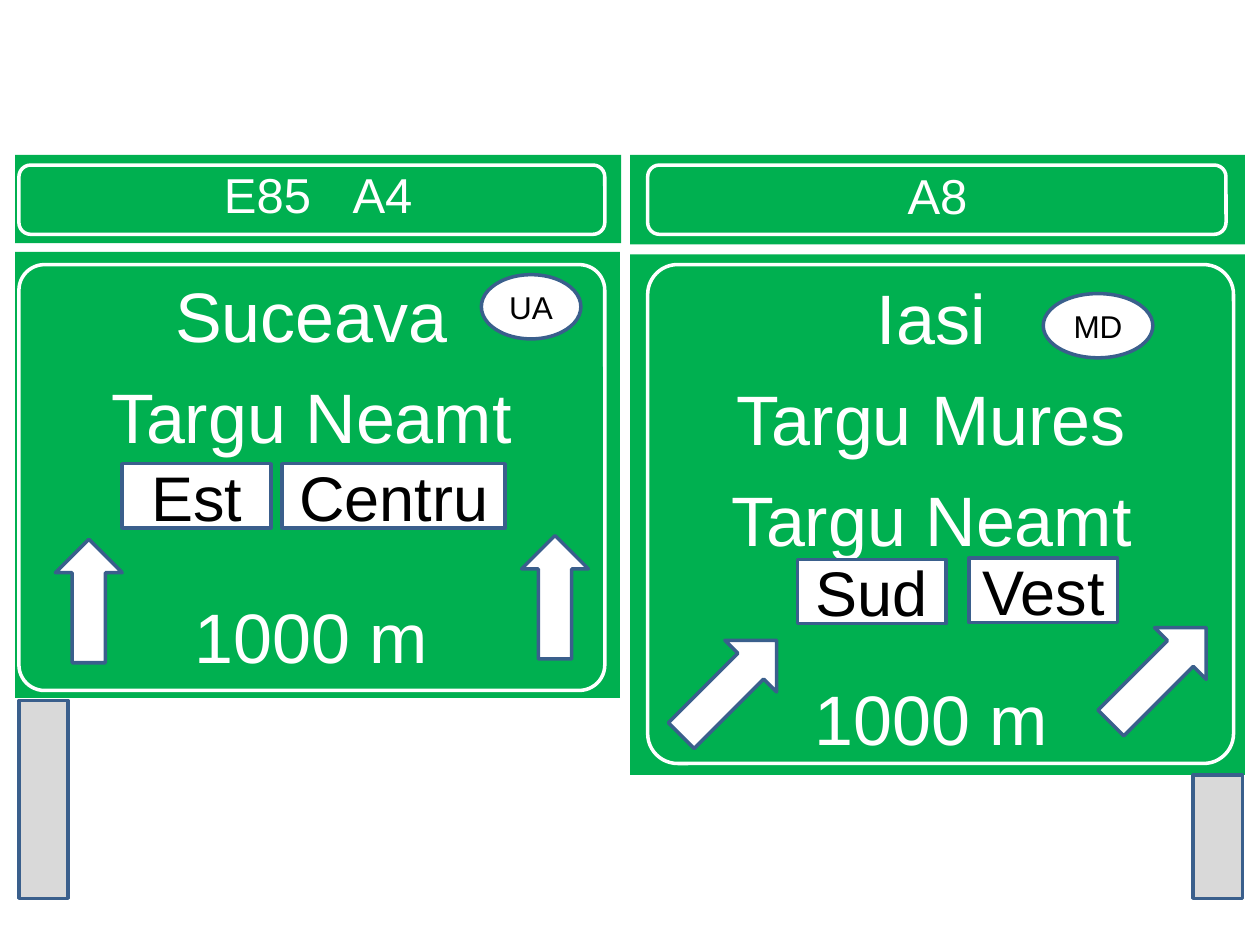
from pptx import Presentation
from pptx.dml.color import RGBColor
from pptx.enum.shapes import MSO_SHAPE
from pptx.enum.text import MSO_ANCHOR, PP_ALIGN
from pptx.util import Emu, Pt

PX = 9144
GREEN, WHITE, BLACK = "00B050", "FFFFFF", "000000"
BLUE, GREY = "3A5F8C", "D9D9D9"


def px(n):
    return Emu(n * PX)


def color(value):
    return RGBColor.from_string(value)


def write(sp, paragraphs, size=40, fill=WHITE, anchor=MSO_ANCHOR.MIDDLE,
          insets=(10, 5, 10, 5), before=(0,), wrap=True, gap=0):
    tf = sp.text_frame
    tf.word_wrap = wrap
    tf.vertical_anchor = anchor
    tf.margin_left, tf.margin_top, tf.margin_right, tf.margin_bottom = map(px, insets)
    for i, (runs, space) in enumerate(zip(paragraphs, before)):
        p = tf.add_paragraph() if i else tf.paragraphs[0]
        p.alignment = PP_ALIGN.CENTER
        p.space_before = Pt(space)
        for text in runs:
            r = p.add_run()
            r.text = text
            r.font.size = Pt(size)
            r.font.name = "Arial"
            r.font.color.rgb = color(fill)
            if text == " ":
                r._r.get_or_add_rPr().set("spc", str(gap * 100))


class RoadSign:
    def __init__(self, slide):
        self.slide = slide

    def shape(self, kind, box, fill=None, line=None):
        sp = self.slide.shapes.add_shape(kind, *map(px, box))
        sp.shadow.inherit = False
        if fill:
            sp.fill.solid()
            sp.fill.fore_color.rgb = color(fill)
        else:
            sp.fill.background()
        if line:
            sp.line.color.rgb = color(line)
            sp.line.width = Pt(2)
        else:
            sp.line.fill.background()
        return sp

    def header(self, box, runs):
        sp = self.shape(MSO_SHAPE.RECTANGLE, box, GREEN)
        write(sp, [runs], size=28, anchor=MSO_ANCHOR.BOTTOM,
              insets=(10, 5, 10, 16), gap=16)

    def panel(self, box, lines, distance_gap):
        sp = self.shape(MSO_SHAPE.RECTANGLE, box, GREEN)
        before = [0] + [9.7] * (len(lines) - 2) + [distance_gap]
        write(sp, [[line] for line in lines], anchor=MSO_ANCHOR.TOP,
              insets=(0, 16, 10, 5), before=before)

    def label(self, kind, box, text, size):
        sp = self.shape(kind, box, WHITE, BLUE)
        write(sp, [[text]], size=size, fill=BLACK, wrap=False)

    def district(self, box, text):
        self.label(MSO_SHAPE.RECTANGLE, box, text, 36)

    def country(self, box, text):
        self.label(MSO_SHAPE.OVAL, box, text, 18)

    def up_arrow(self, left, top):
        self.shape(MSO_SHAPE.UP_ARROW, (left, top, 53, 98), WHITE, BLUE)

    def exit_arrow(self, left, top):
        sp = self.shape(MSO_SHAPE.RIGHT_ARROW, (left, top, 107, 58), WHITE, BLUE)
        sp.rotation = 315

    def post(self, box):
        self.shape(MSO_SHAPE.RECTANGLE, box, GREY, BLUE)

    def border(self, box, radius=0.17):
        sp = self.shape(MSO_SHAPE.ROUNDED_RECTANGLE, box, line=WHITE)
        sp.adjustments[0] = radius


def main():
    prs = Presentation()
    prs.slide_width, prs.slide_height = px(1000), px(750)
    s = RoadSign(prs.slides.add_slide(prs.slide_layouts[6]))

    s.header((12, 123, 481, 70), ["E85", " ", "A4"])
    s.panel((12, 200, 480, 354), ["Suceava", "Targu Neamt", "1000 m"], 78)
    s.header((500, 123, 488, 71), ["A8"])
    s.panel((500, 202, 488, 413),
            ["Iasi", "Targu Mures", "Targu Neamt", "1000 m"], 66)

    for left, top in ((44, 428), (414, 425)):
        s.up_arrow(left, top)
    for left, top in ((525, 517), (866, 507)):
        s.exit_arrow(left, top)

    for left, top, width, text in ((97, 368, 118, "Est"), (224, 368, 177, "Centru"),
                                   (633, 444, 118, "Sud"), (769, 443, 118, "Vest")):
        s.district((left, top, width, 51), text)

    s.country((382, 218, 79, 51), "UA")
    s.country((828, 233, 87, 51), "MD")
    s.post((15, 556, 39, 157))
    s.post((947, 615, 39, 98))

    s.border((15, 131, 465, 55))
    s.border((514, 131, 459, 55))
    s.border((15, 210, 465, 338), 0.06)
    s.border((514, 210, 465, 396), 0.06)

    prs.save("out.pptx")


if __name__ == "__main__":
    main()
